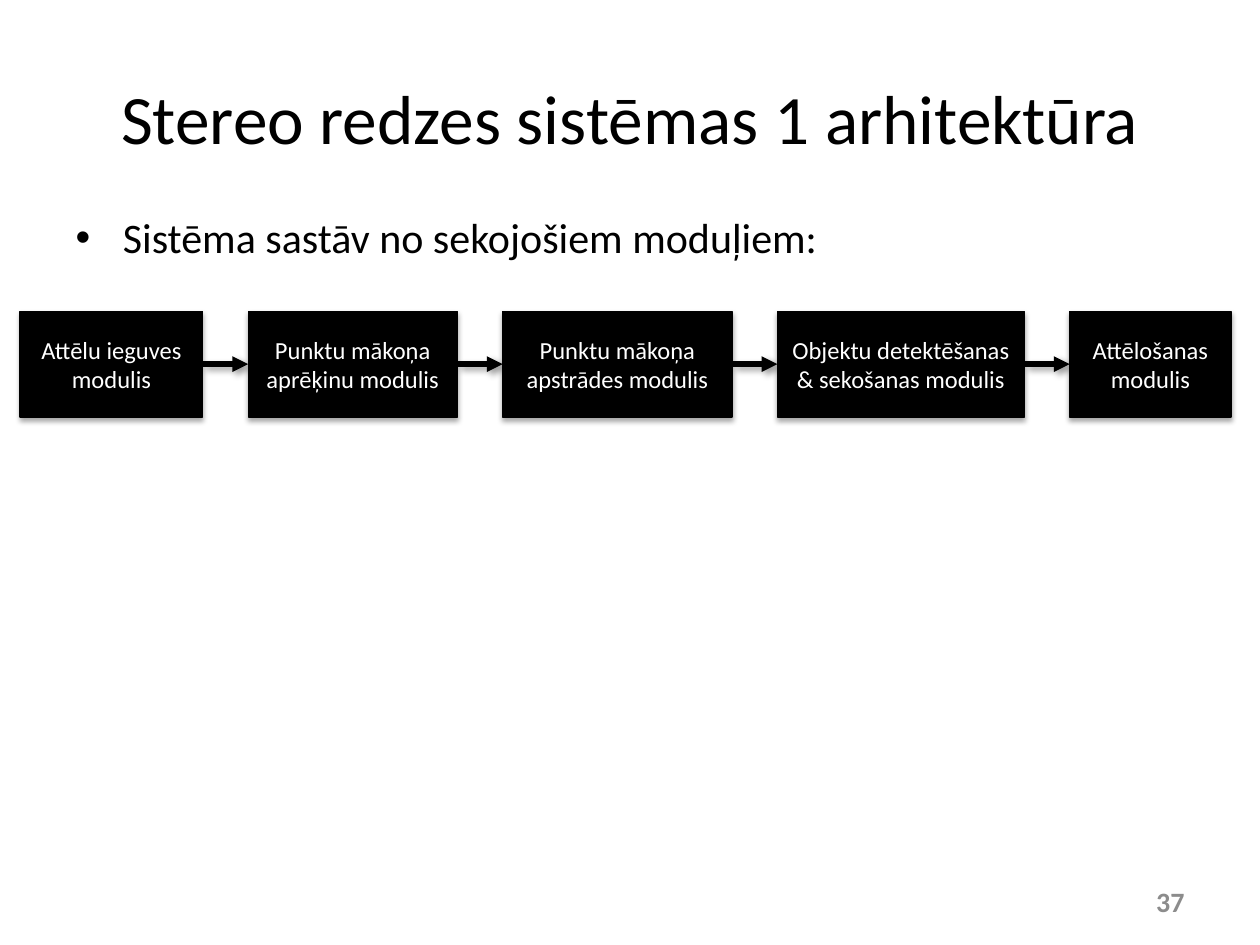
from itertools import pairwise

from lxml.etree import SubElement
from pptx import Presentation
from pptx.dml.color import RGBColor
from pptx.enum.shapes import MSO_CONNECTOR, MSO_SHAPE
from pptx.enum.text import MSO_ANCHOR, MSO_AUTO_SIZE, PP_ALIGN
from pptx.oxml.ns import qn
from pptx.util import Inches, Pt

COLORS = {"ink": "000000", "paper": "FFFFFF", "number": "8C8C8C"}
FONT = "Calibri"
MODULES = [
    ("Attēlu ieguves modulis", 1.45),
    ("Punktu mākoņa aprēķinu modulis", 1.66),
    ("Punktu mākoņa apstrādes modulis", 1.82),
    ("Objektu detektēšanas & sekošanas modulis", 1.96),
    ("Attēlošanas modulis", 1.28),
]
FIRST_LEFT, MODULE_TOP, MODULE_HEIGHT, GAP = 0.16, 2.47, 0.84, 0.36


def color(name):
    return RGBColor.from_string(COLORS[name])


def write(shape, text, size, color_name, align, anchor, bold=False):
    frame = shape.text_frame
    frame.word_wrap = True
    frame.auto_size = MSO_AUTO_SIZE.NONE
    frame.vertical_anchor = anchor
    paragraph = frame.paragraphs[0]
    paragraph.text = text
    paragraph.alignment = align
    paragraph.space_before = Pt(0)
    paragraph.font.name = FONT
    paragraph.font.size = Pt(size)
    paragraph.font.bold = bold
    paragraph.font.color.rgb = color(color_name)


def place(shape, left, top, width, height):
    shape.left, shape.top = Inches(left), Inches(top)
    shape.width, shape.height = Inches(width), Inches(height)


def add_shadow(shape, opacity, blur, distance, angle):
    effects = SubElement(shape._element.spPr, qn("a:effectLst"))
    shadow = SubElement(
        effects, qn("a:outerShdw"), blurRad=str(Pt(blur)), dist=str(Pt(distance)),
        dir=str(angle * 60000), rotWithShape="0")
    shade = SubElement(shadow, qn("a:srgbClr"), val=COLORS["ink"])
    SubElement(shade, qn("a:alpha"), val=str(opacity * 1000))


def add_module(slide, text, left, width):
    box = slide.shapes.add_shape(
        MSO_SHAPE.RECTANGLE, Inches(left), Inches(MODULE_TOP),
        Inches(width), Inches(MODULE_HEIGHT))
    box.fill.solid()
    box.fill.fore_color.rgb = color("ink")
    box.line.color.rgb = color("ink")
    box.line.width = Pt(0.75)
    add_shadow(box, 35, 3.1, 1.8, 90)
    write(box, text, 14, "paper", PP_ALIGN.CENTER, MSO_ANCHOR.MIDDLE)
    return box


def add_arrow(slide, source, target):
    arrow = slide.shapes.add_connector(MSO_CONNECTOR.STRAIGHT, 0, 0, 0, 0)
    arrow.begin_connect(source, 3)
    arrow.end_connect(target, 1)
    arrow.line.color.rgb = color("ink")
    arrow.line.width = Pt(3)
    SubElement(arrow._element.spPr.find(qn("a:ln")), qn("a:tailEnd"), type="triangle")
    add_shadow(arrow, 40, 4, 3, 45)


def add_pipeline(slide):
    boxes = []
    left = FIRST_LEFT
    for text, width in MODULES:
        boxes.append(add_module(slide, text, left, width))
        left += width + GAP
    for source, target in pairwise(boxes):
        add_arrow(slide, source, target)


def add_page_number(slide, number):
    box = slide.shapes.add_textbox(
        Inches(7.17), Inches(6.95), Inches(2.33), Inches(0.4))
    write(box, number, 16, "number", PP_ALIGN.RIGHT, MSO_ANCHOR.MIDDLE, bold=True)


def main():
    deck = Presentation()
    deck.slide_width, deck.slide_height = Inches(10), Inches(7.5)
    slide = deck.slides.add_slide(deck.slide_layouts[1])
    title, body = slide.shapes.title, slide.placeholders[1]
    place(title, 0.5, 0.3, 9, 1.25)
    write(title, "Stereo redzes sistēmas 1 arhitektūra", 39.6, "ink",
          PP_ALIGN.CENTER, MSO_ANCHOR.MIDDLE)
    place(body, 0.5, 1.63, 9, 0.57)
    write(body, "Sistēma sastāv no sekojošiem moduļiem:", 24, "ink",
          PP_ALIGN.LEFT, MSO_ANCHOR.TOP)
    add_pipeline(slide)
    add_page_number(slide, "37")
    deck.save("out.pptx")


if __name__ == "__main__":
    main()
